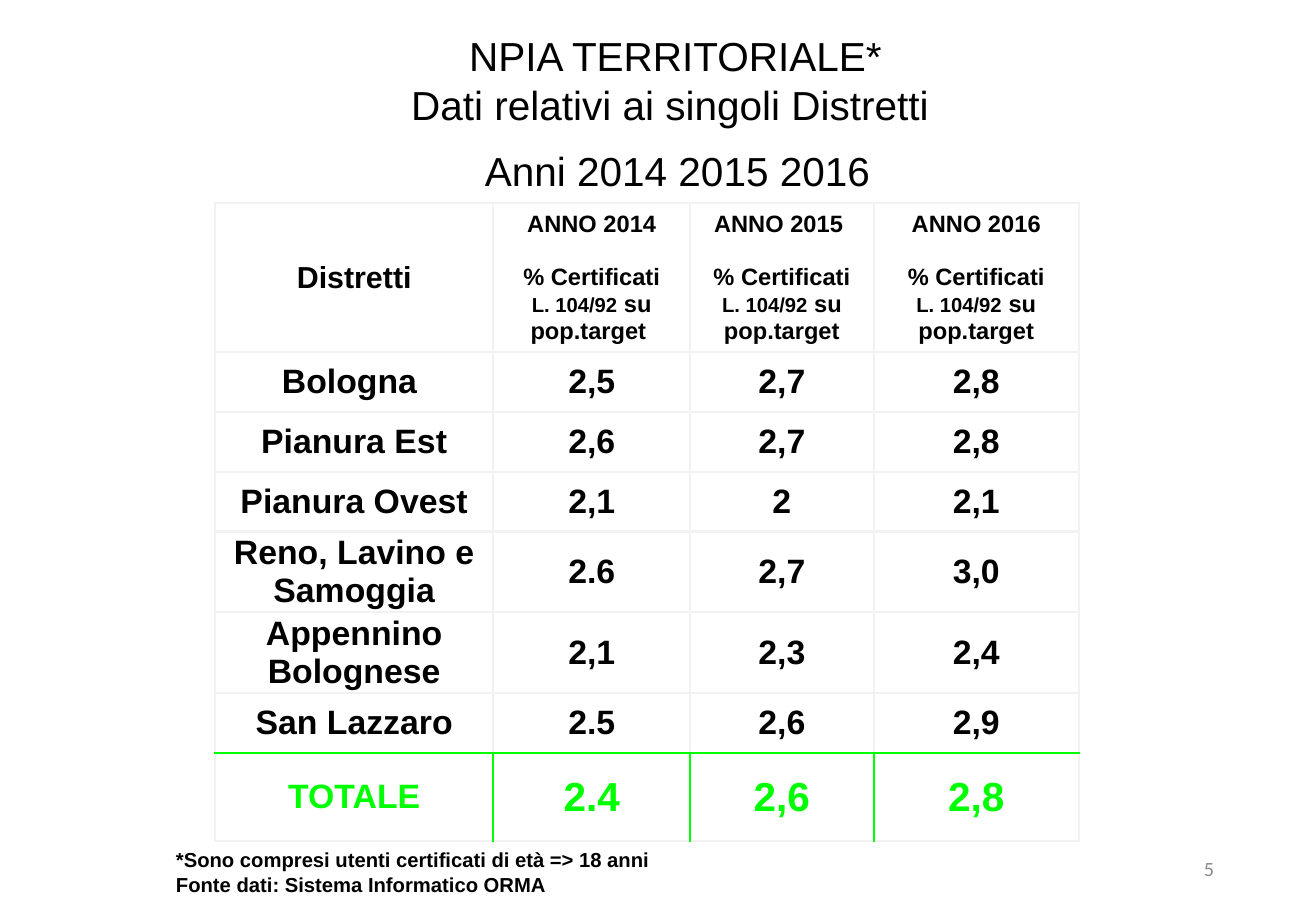
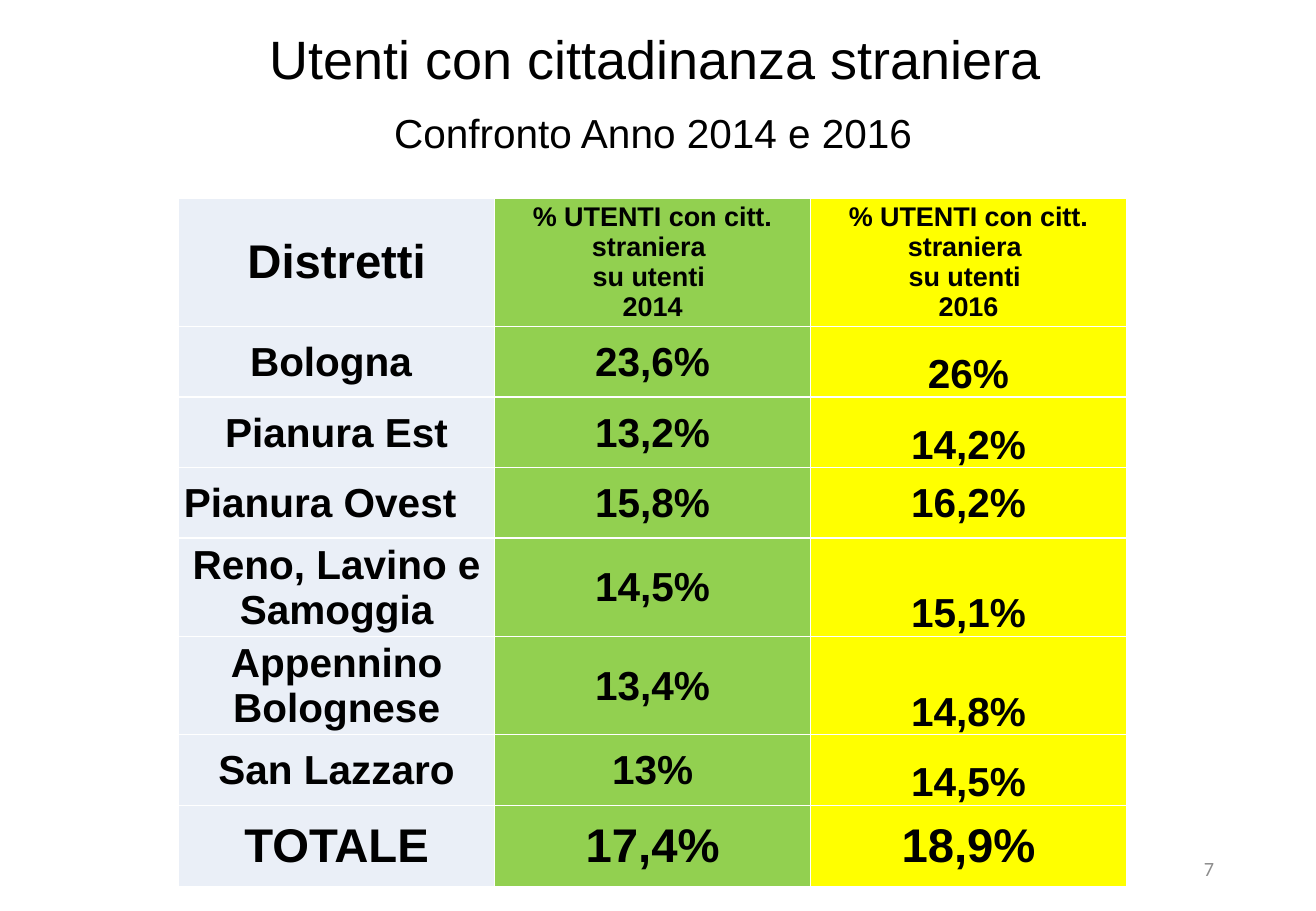
from dataclasses import dataclass
from typing import Optional, Sequence, Union

from lxml.etree import SubElement
from pptx import Presentation
from pptx.dml.color import RGBColor
from pptx.enum.text import MSO_ANCHOR, MSO_AUTO_SIZE, PP_ALIGN
from pptx.oxml.ns import qn
from pptx.util import Inches, Pt

UNIT = Inches(0.1)  # grid square: the slide is 108.3 columns by 75 rows
SLIDE_COLUMNS, SLIDE_ROWS = 108.3, 75

BLACK = RGBColor(0x00, 0x00, 0x00)
WHITE = RGBColor(0xFF, 0xFF, 0xFF)
PAGE_GREY = RGBColor(0x8C, 0x8C, 0x8C)
RULE_GREY = RGBColor(0xF2, 0xF2, 0xF2)
TOTAL_GREEN = RGBColor(0x00, 0xFF, 0x00)
DISTRICT_BLUE = RGBColor(0xEA, 0xEF, 0xF7)
GREEN_2014 = RGBColor(0x92, 0xD0, 0x50)
YELLOW_2016 = RGBColor(0xFF, 0xFF, 0x00)

DISTRICTS = ("Bologna ", "Pianura Est", "Pianura Ovest",
             "Reno, Lavino e Samoggia", "Appennino Bolognese", "San Lazzaro")
TWO_LINE_DISTRICTS = DISTRICTS[3:5]


@dataclass(frozen=True)
class Box:
    """A rectangle in grid squares."""
    column: float
    row: float
    columns: float
    rows: float

    def lengths(self) -> tuple[int, ...]:
        return tuple(grid(n) for n in (self.column, self.row, self.columns, self.rows))


@dataclass(frozen=True)
class Span:
    text: str
    size: Optional[float] = None


@dataclass(frozen=True)
class Line:
    spans: tuple[Span, ...]
    space_before: float = 0


@dataclass(frozen=True)
class CellStyle:
    size: float
    color: RGBColor = BLACK
    fill: Optional[RGBColor] = None
    anchor: MSO_ANCHOR = MSO_ANCHOR.MIDDLE
    margins: tuple[float, float, float, float] = (0.5, 0, 0.5, 0)


Text = Sequence[Union[str, Line]]


def grid(squares: float) -> int:
    return round(squares * UNIT)


def write(frame, lines: Text, *, size: float, color: RGBColor = BLACK,
          bold: bool = False, font: str = "Arial",
          align: PP_ALIGN = PP_ALIGN.CENTER) -> None:
    for index, line in enumerate(lines):
        if isinstance(line, str):
            line = Line((Span(line),))
        paragraph = frame.add_paragraph() if index else frame.paragraphs[0]
        paragraph.alignment = align
        paragraph.space_before = Pt(line.space_before)
        for span in line.spans:
            run = paragraph.add_run()
            run.text = span.text
            run.font.name = font
            run.font.size = Pt(span.size or size)
            run.font.bold = bold
            run.font.color.rgb = color


def add_text(slide, box: Box, lines: Text, *,
             anchor: MSO_ANCHOR = MSO_ANCHOR.TOP, **text_format) -> None:
    frame = slide.shapes.add_textbox(*box.lengths()).text_frame
    frame.word_wrap = True
    frame.auto_size = MSO_AUTO_SIZE.NONE
    frame.vertical_anchor = anchor
    write(frame, lines, **text_format)


def add_page_number(slide, number: int) -> None:
    add_text(slide, Box(76.5, 69.5, 24.4, 4), [str(number)], size=12,
             color=PAGE_GREY, font="Calibri", align=PP_ALIGN.RIGHT,
             anchor=MSO_ANCHOR.MIDDLE)


def add_grid_table(slide, column: float, row: float,
                   widths: Sequence[float], heights: Sequence[float]):
    box = Box(column, row, sum(widths), sum(heights))
    table = slide.shapes.add_table(len(heights), len(widths), *box.lengths()).table
    table.first_row = table.horz_banding = False
    for table_column, width in zip(table.columns, widths):
        table_column.width = grid(width)
    for table_row, height in zip(table.rows, heights):
        table_row.height = grid(height)
    return table


def fill_cell(cell, lines: Text, style: CellStyle) -> None:
    (cell.margin_left, cell.margin_top,
     cell.margin_right, cell.margin_bottom) = map(grid, style.margins)
    cell.vertical_anchor = style.anchor
    if style.fill is None:
        cell.fill.background()
    else:
        cell.fill.solid()
        cell.fill.fore_color.rgb = style.fill
    write(cell.text_frame, lines, size=style.size, color=style.color, bold=True)


def set_borders(cell, width: float, *, left: RGBColor, right: RGBColor,
                top: RGBColor, bottom: RGBColor) -> None:
    properties = cell._tc.get_or_add_tcPr()
    edges = {"a:lnL": left, "a:lnR": right, "a:lnT": top, "a:lnB": bottom}
    for position, (tag, color) in enumerate(edges.items()):
        edge = SubElement(properties, qn(tag), w=str(Pt(width)))
        SubElement(SubElement(edge, qn("a:solidFill")), qn("a:srgbClr"), val=str(color))
        properties.insert(position, edge)


def row_heights(header: float, single: float, double: float, total: float) -> list[float]:
    return [header,
            *(double if name in TWO_LINE_DISTRICTS else single for name in DISTRICTS),
            total]


def year_header(year: str, ending: str = "") -> list[Union[str, Line]]:
    return [year,
            Line((Span("% Certificati"),), space_before=16),
            Line((Span("L. 104/92", 12), Span(" su pop.target" + ending)))]


def build_certified_slide(slide) -> None:
    add_text(slide, Box(28.1, 2.1, 55, 9.1),
             ["NPIA TERRITORIALE*", "Dati relativi ai singoli Distretti "], size=24)
    add_text(slide, Box(16.7, 11.5, 78.1, 5), ["Anni 2014 2015 2016"], size=24)

    shares = (("2,5", "2,7", "2,8"), ("2,6", "2,7", "2,8"), ("2,1", "2", "2,1"),
              ("2.6", "2,7", "3,0"), ("2,1", "2,3", "2,4"), ("2.5", "2,6", "2,9"))
    headers = [["Distretti"], year_header("ANNO 2014", " "),
               year_header("ANNO 2015 "), year_header("ANNO 2016")]
    rows = [headers,
            *([[name], *([share] for share in values)]
              for name, values in zip(DISTRICTS, shares)),
            [["TOTALE"], ["2.4"], ["2,6"], ["2,8"]]]
    table = add_grid_table(slide, 17.7, 16.7, (22.9, 16.2, 15.1, 16.9),
                           row_heights(12.3, 4.92, 6.65, 7.3))
    total_row, last_column = len(rows) - 1, len(headers) - 1

    def rule(is_total_edge: bool) -> RGBColor:
        return TOTAL_GREEN if is_total_edge else RULE_GREY

    for r, row in enumerate(rows):
        is_total = r == total_row
        for c, lines in enumerate(row):
            if r == 0:
                style = CellStyle(14 if c else 18)
            elif is_total:
                style = CellStyle(24 if c else 20, TOTAL_GREEN)
            else:
                style = CellStyle(20)
            cell = table.cell(r, c)
            fill_cell(cell, lines, style)
            set_borders(cell, 1.5, left=rule(is_total and c > 0),
                        right=rule(is_total and c < last_column),
                        top=rule(is_total), bottom=rule(r == total_row - 1))

    add_text(slide, Box(13.5, 69.3, 79.3, 7.1),
             ["*Sono compresi utenti certificati di età => 18 anni",
              "Fonte dati: Sistema Informatico ORMA"],
             size=12, bold=True, align=PP_ALIGN.LEFT)
    add_page_number(slide, 5)


def build_citizenship_slide(slide) -> None:
    shares = (("23,6%", "26%"), ("13,2%", "14,2%"), ("15,8%", "16,2%"),
              ("14,5%", "15,1%"), ("13,4%", "14,8%"), ("13%", "14,5%"))
    headers = [["Distretti"],
               *(["% UTENTI con citt. straniera ", "su utenti ", year]
                 for year in ("2014", "2016"))]
    rows = [headers,
            *([[name], *([share] for share in values)]
              for name, values in zip(DISTRICTS, shares)),
            [["TOTALE"], ["17,4%"], ["18,9%"]]]
    table = add_grid_table(slide, 14.7, 16.3, [26] * 3, row_heights(10.6, 5.8, 8.1, 6.7))
    fills = (DISTRICT_BLUE, GREEN_2014, YELLOW_2016)
    total_row, ovest_row = len(rows) - 1, DISTRICTS.index("Pianura Ovest") + 1

    for r, row in enumerate(rows):
        for c, lines in enumerate(row):
            if r == 0:
                style = CellStyle(16 if c else 28, fill=fills[c])
            else:
                at_bottom = c == 2 and r not in (ovest_row, total_row)
                right_margin = 2.8 if (r, c) == (ovest_row, 0) else 0.1
                style = CellStyle(28 if r == total_row else 24, fill=fills[c],
                                  anchor=MSO_ANCHOR.BOTTOM if at_bottom else MSO_ANCHOR.MIDDLE,
                                  margins=(0.1, 0.1, right_margin, 0))
            cell = table.cell(r, c)
            fill_cell(cell, lines, style)
            set_borders(cell, 1, left=WHITE, right=WHITE, top=WHITE, bottom=WHITE)

    add_text(slide, Box(14.4, 1.6, 79.1, 6.4), ["Utenti con cittadinanza straniera"], size=32)
    add_text(slide, Box(14.7, 8.4, 78.1, 5.1), ["Confronto Anno 2014 e 2016"], size=24)
    add_page_number(slide, 7)


def main() -> None:
    deck = Presentation()
    deck.slide_width, deck.slide_height = grid(SLIDE_COLUMNS), grid(SLIDE_ROWS)
    blank = deck.slide_layouts[6]
    for build in (build_certified_slide, build_citizenship_slide):
        build(deck.slides.add_slide(blank))
    deck.save("out.pptx")


if __name__ == "__main__":
    main()
